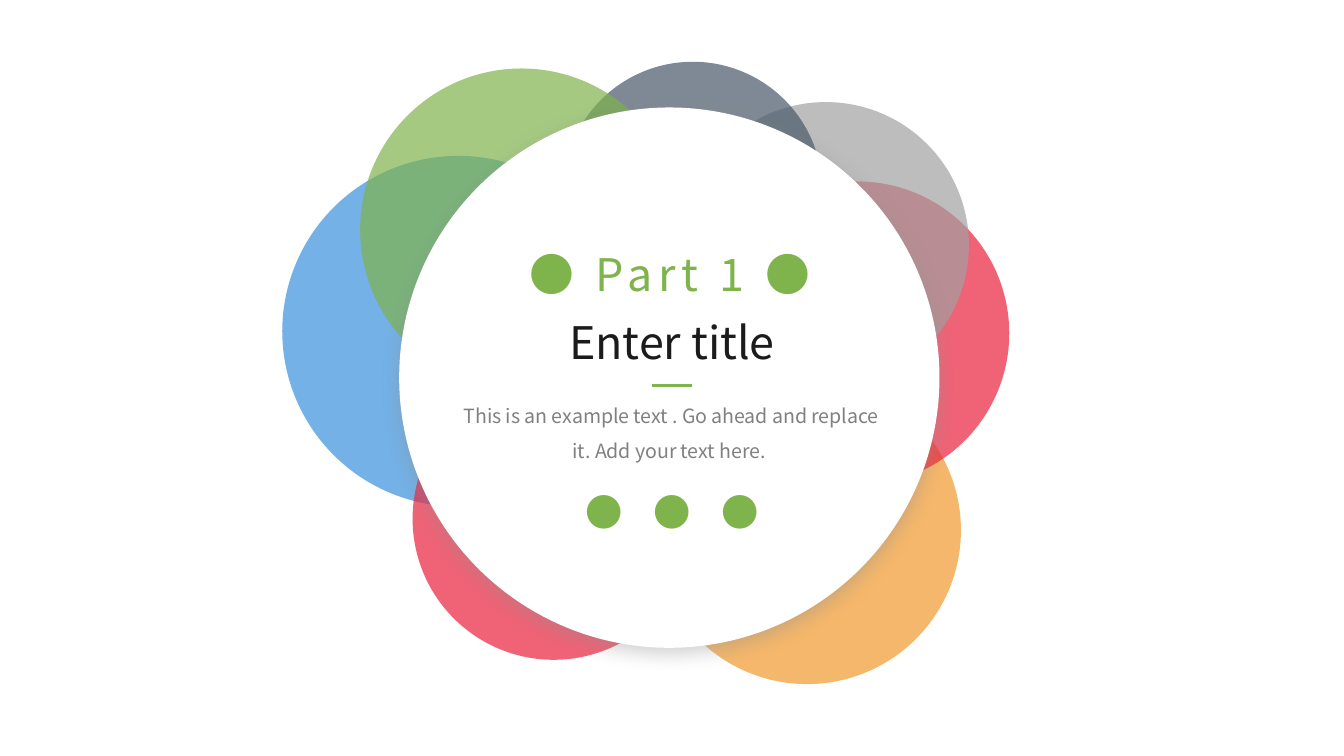
from dataclasses import dataclass

from lxml.etree import SubElement
from pptx import Presentation
from pptx.dml.color import RGBColor
from pptx.enum.shapes import MSO_CONNECTOR, MSO_SHAPE
from pptx.enum.text import MSO_ANCHOR, MSO_AUTO_SIZE, PP_ALIGN
from pptx.oxml.ns import qn
from pptx.util import Inches, Pt


@dataclass(frozen=True)
class Theme:
    font: str = "Noto Sans CJK JP"
    blue: str = "3891DE"
    red: str = "EB223D"
    orange: str = "F1992D"
    gray: str = "A1A1A1"
    slate: str = "485868"
    green: str = "7FB34C"
    white: str = "FFFFFF"
    shadow: str = "8D8D8D"
    title: str = "1B1B1B"
    body: str = "808080"
    heading_size: float = 24
    dots_size: float = 20
    body_size: float = 10.5
    petal_alpha: int = 70


THEME = Theme()


def add_circle(s, left, top, width, height, color, alpha=100):
    sp = s.shapes.add_shape(MSO_SHAPE.OVAL, *map(Inches, (left, top, width, height)))
    sp.shadow.inherit = False
    sp.line.fill.background()
    sp.fill.solid()
    sp.fill.fore_color.rgb = RGBColor.from_string(color)
    if alpha < 100:
        clr = sp._element.spPr.find(qn("a:solidFill"))[0]
        SubElement(clr, qn("a:alpha"), val=str(alpha * 1000))
    return sp


def add_soft_shadow(sp):
    effects = sp._element.spPr.find(qn("a:effectLst"))
    shadow = SubElement(effects, qn("a:outerShdw"), blurRad=str(Pt(10)),
                        dist=str(Pt(3)), dir="5400000", algn="t", rotWithShape="0")
    clr = SubElement(shadow, qn("a:srgbClr"), val=THEME.shadow)
    SubElement(clr, qn("a:alpha"), val="40000")


def add_text(s, box, text, size, color, spacing=0, frame=None, paragraph=None):
    """Add one paragraph; frame and paragraph hold format values that differ."""
    tf = s.shapes.add_textbox(*map(Inches, box)).text_frame
    p = tf.paragraphs[0]
    r = p.add_run()
    r.text = text
    formats = (
        (tf, {"word_wrap": True, "auto_size": MSO_AUTO_SIZE.SHAPE_TO_FIT_TEXT,
              **(frame or {})}),
        (p, {"alignment": PP_ALIGN.CENTER, **(paragraph or {})}),
        (r.font, {"name": THEME.font, "size": Pt(size)}),
    )
    for target, values in formats:
        for name, value in values.items():
            setattr(target, name, value)
    r.font.color.rgb = RGBColor.from_string(color)
    rPr = r.font._element
    SubElement(rPr, qn("a:ea"), typeface=THEME.font)
    if spacing:
        rPr.set("spc", str(spacing * 100))


def add_flower(s, left, top):
    """Draw translucent petals around a white disc."""
    petals = (
        (0, 0.7, 2.62, 2.61, THEME.blue),
        (0.97, 2.35, 2.1, 2.1, THEME.red),
        (2.76, 2.34, 2.29, 2.29, THEME.orange),
        (3.15, 0.89, 2.26, 2.26, THEME.red),
        (2.98, 0.3, 2.13, 2.13, THEME.gray),
        (2.09, 0, 1.93, 1.93, THEME.slate),
        (0.58, 0.05, 2.4, 2.4, THEME.green),
    )
    for x, y, width, height, color in petals:
        add_circle(s, left + x, top + y, width, height, color, THEME.petal_alpha)
    disc = add_circle(s, left + 0.87, top + 0.34, 4.02, 4.02, THEME.white)
    add_soft_shadow(disc)


def add_rule(s, left, top, width):
    line = s.shapes.add_connector(MSO_CONNECTOR.STRAIGHT, Inches(left), Inches(top),
                                  Inches(left + width), Inches(top))
    line.line.color.rgb = RGBColor.from_string(THEME.green)
    line.line.width = Pt(1.5)
    SubElement(line._element.spPr, qn("a:effectLst"))


def add_section_text(s, left, top):
    add_text(s, (left + 0.82, top + 0.5, 1.82, 0.5), "Enter title",
             THEME.heading_size, THEME.title, frame={"word_wrap": False})
    add_text(s, (left, top + 1.08, 3.45, 0.63),
             "This is an example text . Go ahead and replace it. Add your text here. ",
             THEME.body_size, THEME.body, paragraph={"line_spacing": 1.5})
    add_rule(s, left + 1.58, top + 1.08, 0.3)
    add_text(s, (left + 0.43, top, 2.57, 0.5), "● Part 1 ●",
             THEME.heading_size, THEME.green, spacing=3)
    add_text(s, (left + 1.14, top + 1.63, 1.18, 0.77), "● ● ●",
             THEME.dots_size, THEME.green, spacing=6,
             frame={"word_wrap": False, "auto_size": MSO_AUTO_SIZE.NONE,
                    "vertical_anchor": MSO_ANCHOR.MIDDLE})


def main():
    prs = Presentation()
    prs.slide_width = Inches(10)
    prs.slide_height = prs.slide_width * 9 // 16
    s = prs.slides.add_slide(prs.slide_layouts[6])
    add_flower(s, 2.1, 0.46)
    add_section_text(s, 3.27, 1.79)
    prs.save("out.pptx")


if __name__ == "__main__":
    main()
